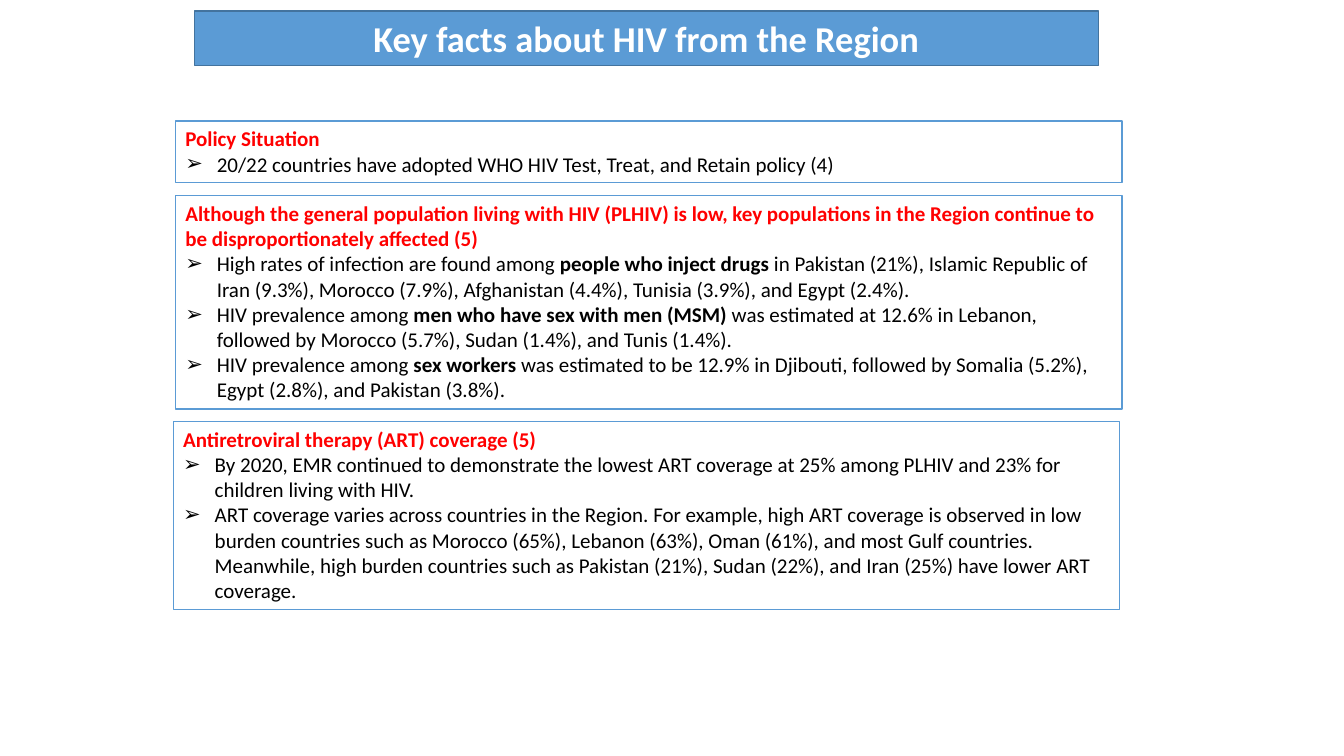
from lxml import etree
from pptx import Presentation
from pptx import util as u
from pptx.dml.color import RGBColor
from pptx.enum import shapes, text
from pptx.oxml import ns

BLUE, DARK_BLUE = "5B9BD5", "43739E"
WHITE, RED, BLACK = "FFFFFF", "FF0000", "000000"
PANEL_WIDTH = 676.1

# Left, top, height, heading, bullets; every second span of a bullet is bold
PANELS = [
    (125.3, 86.4, 43.9, "Policy Situation", [
        ["20/22 countries have adopted WHO HIV Test, Treat, and Retain policy (4)"],
    ]),
    (125.3, 139.7, 152.6,
     "Although the general population living with HIV (PLHIV) is low, key populations "
     "in the Region continue to be disproportionately affected (5)", [
         ["High rates of infection are found among ", "people who inject drugs ",
          "in Pakistan (21%), Islamic Republic of Iran (9.3%), Morocco (7.9%), "
          "Afghanistan (4.4%), Tunisia (3.9%), and Egypt (2.4%)."],
         ["HIV prevalence among ", "men who have sex with men (MSM) ",
          "was estimated at 12.6% in Lebanon, followed by Morocco (5.7%), "
          "Sudan (1.4%), and Tunis (1.4%)."],
         ["HIV prevalence among ", "sex workers ",
          "was estimated to be 12.9% in Djibouti, followed by Somalia (5.2%), "
          "Egypt (2.8%), and Pakistan (3.8%)."],
     ]),
    (123.8, 301, 134.6, "Antiretroviral therapy (ART) coverage (5)", [
        ["By 2020, EMR continued to demonstrate the lowest ART coverage at 25% among "
         "PLHIV and 23% for children living with HIV."],
        ["ART coverage varies across countries in the Region. For example, high ART "
         "coverage is observed in low burden countries such as Morocco (65%), Lebanon "
         "(63%), Oman (61%), and most Gulf countries. Meanwhile, high burden countries "
         "such as Pakistan (21%), Sudan (22%), and Iran (25%) have lower ART coverage."],
    ]),
]


def color(value):
    return RGBColor.from_string(value)


def add_box(page, left, top, width, height, fill, line):
    box = page.shapes.add_shape(shapes.MSO_SHAPE.RECTANGLE, u.Pt(left), u.Pt(top),
                                u.Pt(width), u.Pt(height))
    box.shadow.inherit = False
    box.fill.solid()
    box.fill.fore_color.rgb = color(fill)
    box.line.color.rgb = color(line)
    box.line.width = u.Pt(1)
    frame = box.text_frame
    frame.word_wrap = True
    frame.auto_size = text.MSO_AUTO_SIZE.SHAPE_TO_FIT_TEXT
    frame.vertical_anchor = text.MSO_ANCHOR.TOP
    return frame


def add_span(para, words, size=15, fill=BLACK, bold=False):
    span = para.add_run()
    span.text = words
    span.font.name = "Calibri"
    span.font.size = u.Pt(size)
    span.font.bold = bold
    span.font.color.rgb = color(fill)


def add_bullet(frame, spans):
    para = frame.add_paragraph()
    para.alignment = text.PP_ALIGN.LEFT
    properties = para._p.get_or_add_pPr()
    properties.set("marL", str(u.Pt(22.5)))
    properties.set("indent", str(u.Pt(-22.5)))
    etree.SubElement(properties, ns.qn("a:buFont"), typeface="Wingdings 2")
    properties[-1].set("typeface", "Arial")
    etree.SubElement(properties, ns.qn("a:buChar"), char="➢")
    for index, words in enumerate(spans):
        add_span(para, words, bold=index % 2 == 1)


def add_panel(page, left, top, height, heading, bullets):
    frame = add_box(page, left, top, PANEL_WIDTH, height, WHITE, BLUE)
    para = frame.paragraphs[0]
    para.alignment = text.PP_ALIGN.LEFT
    add_span(para, heading, fill=RED, bold=True)
    for spans in bullets:
        add_bullet(frame, spans)


def add_title(page, words):
    frame = add_box(page, 139, 7.9, 645.8, 38.9, BLUE, DARK_BLUE)
    para = frame.paragraphs[0]
    para.alignment = text.PP_ALIGN.CENTER
    add_span(para, words, size=26, fill=WHITE, bold=True)


def main():
    deck = Presentation()
    deck.slide_width, deck.slide_height = u.Pt(960), u.Pt(540)
    page = deck.slides.add_slide(deck.slide_layouts[6])

    # Title bar
    add_title(page, "Key facts about HIV from the Region")

    # Fact panels
    for panel in PANELS:
        add_panel(page, *panel)

    deck.save("out.pptx")


if __name__ == "__main__":
    main()
